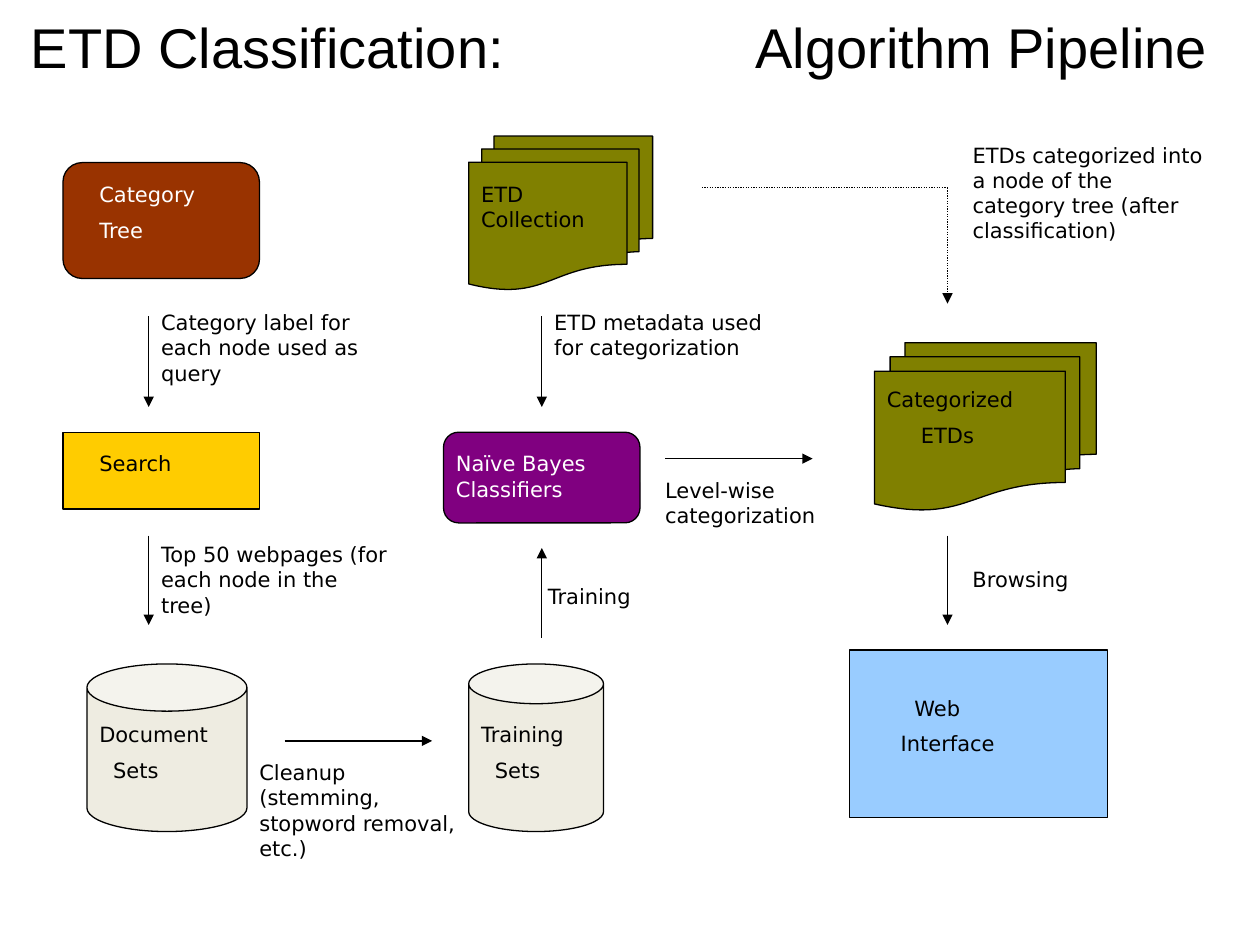
from pptx import Presentation
from pptx.dml.color import RGBColor as Rgb
from pptx.enum.dml import MSO_LINE as Dash
from pptx.enum.shapes import MSO_CONNECTOR as Conn, MSO_SHAPE as Shape
from pptx.enum.text import MSO_AUTO_SIZE as Fit, PP_ALIGN as Align
from pptx.oxml.ns import qn
from pptx.util import Inches, Pt
from lxml.etree import SubElement

COLORS = {
    "black": "000000", "white": "FFFFFF", "brown": "993300", "gold": "FFCC00",
    "purple": "800080", "cream": "EEECE1", "blue": "99CCFF", "olive": "808000",
}


class Flow:
    """Draws the parts of a flow diagram on one slide in a shared style."""

    font, size, width = "DejaVu Sans", 12, 0.75

    def __init__(self, slide):
        self.slide = slide

    def color(self, name):
        return Rgb.from_string(COLORS[name])

    def box(self, kind, place, fill, adjust=None):
        shape = self.slide.shapes.add_shape(kind, *map(Inches, place))
        shape.shadow.inherit = False
        shape.fill.solid()
        shape.fill.fore_color.rgb = self.color(fill)
        shape.line.color.rgb = self.color("black")
        shape.line.width = Pt(self.width)
        if adjust is not None:
            shape.adjustments[0] = adjust

    def label(self, para, text, color, font, size):
        para.text = text
        run = para.runs[0].font
        run.name, run.size = font, Pt(size)
        run.color.rgb = self.color(color)

    def text(self, place, lines, color="black", indent=0, gap=6):
        frame = self.slide.shapes.add_textbox(*map(Inches, place)).text_frame
        frame.word_wrap = True
        frame.auto_size = Fit.SHAPE_TO_FIT_TEXT
        for i, line in enumerate(lines):
            para = frame.add_paragraph() if i else frame.paragraphs[0]
            self.label(para, line, color, self.font, self.size)
            if i:
                para.space_before = Pt(gap)
            if i and indent:
                para._p.get_or_add_pPr().set("marL", str(Inches(indent)))

    def title(self, place, text):
        frame = self.slide.shapes.add_textbox(*map(Inches, place)).text_frame
        frame.word_wrap = True
        frame.margin_top = Inches(0.1)
        para = frame.paragraphs[0]
        self.label(para, text, "black", "Arial", 32)
        para.alignment = Align.CENTER

    def line(self, start, end, head=True, dash=None):
        link = self.slide.shapes.add_connector(
            Conn.STRAIGHT, *map(Inches, start + end))
        link.line.color.rgb = self.color("black")
        link.line.width = Pt(self.width)
        if dash:
            link.line.dash_style = dash
        props = link._element.spPr
        if head:
            SubElement(props.get_or_add_ln(), qn("a:tailEnd"), type="triangle")
        SubElement(props, qn("a:effectLst"))


def main():
    deck = Presentation()
    deck.slide_width, deck.slide_height = Inches(10), Inches(7.5)
    flow = Flow(deck.slides.add_slide(deck.slide_layouts[6]))

    for box in [
        (Shape.ROUNDED_RECTANGLE, (0.5, 1.29, 1.56, 0.92), "brown", 0.167),
        (Shape.CAN, (0.69, 5.27, 1.27, 1.33), "cream", 0.295),
        (Shape.RECTANGLE, (0.5, 3.43, 1.56, 0.61), "gold"),
        (Shape.ROUNDED_RECTANGLE, (3.52, 3.43, 1.56, 0.72), "purple", 0.167),
        (Shape.CAN, (3.72, 5.27, 1.07, 1.33), "cream", 0.295),
        (Shape.RECTANGLE, (6.74, 5.16, 2.05, 1.33), "blue"),
        (Shape.FLOWCHART_MULTIDOCUMENT, (3.72, 1.08, 1.46, 1.22), "olive"),
        (Shape.FLOWCHART_MULTIDOCUMENT, (6.94, 2.72, 1.76, 1.33), "olive"),
    ]:
        flow.box(*box)

    flow.text((0.69, 1.39, 1.76, 0.61), ["Category", "Tree"], "white")
    flow.text((3.52, 3.53, 1.66, 0.5), ["Naïve Bayes Classifiers"], "white")
    flow.text((0.69, 5.68, 1.46, 0.74), ["Document", "Sets"], indent=0.11)
    flow.text((3.72, 5.68, 1.46, 0.74), ["Training", "Sets"], indent=0.11)
    flow.text((6.94, 3.02, 1.56, 0.74), ["Categorized", "ETDs"], indent=0.27)
    flow.text((7.16, 5.47, 1.44, 0.37), ["Web"])
    flow.text((7.05, 5.75, 1.55, 0.37), ["Interface"])
    flow.text((1.96, 5.98, 2.05, 0.91),
              ["Cleanup", "(stemming,", "stopword removal,", "etc.)"], gap=0)

    for place, words in [
        ((0.69, 3.53, 1.07, 0.37), "Search"),
        ((3.72, 1.39, 1.36, 0.61), "ETD Collection"),
        ((1.18, 2.41, 2.05, 0.86), "Category label for each node used as query"),
        ((1.18, 4.25, 2.05, 0.86), "Top 50 webpages (for each node in the tree)"),
        ((5.18, 3.74, 2.05, 0.61), "Level-wise categorization"),
        ((4.3, 2.41, 2.05, 0.87), "ETD metadata used for categorization"),
        ((7.62, 4.45, 1.27, 0.37), "Browsing"),
        ((4.25, 4.58, 1.17, 0.37), "Training"),
        ((7.62, 1.08, 2.05, 1.35),
         "ETDs categorized into a node of the category tree (after classification)"),
    ]:
        flow.text(place, [words])

    for x, top, end in [(1.18, 2.51, 3.23), (1.18, 4.25, 4.96), (4.3, 2.51, 3.23),
                        (4.3, 5.06, 4.35), (7.52, 4.25, 4.96)]:
        flow.line((x, top), (x, end))
    for left, right, y in [(2.26, 3.43, 5.88), (5.28, 6.45, 3.64)]:
        flow.line((left, y), (right, y))
    turn = (7.52, 1.49)
    flow.line((5.57, 1.49), turn, head=False, dash=Dash.ROUND_DOT)
    flow.line(turn, (7.52, 2.41), dash=Dash.ROUND_DOT)

    flow.title((0, 0, 4.25, 0.75), "ETD Classification:")
    flow.title((5.58, 0, 4.42, 0.58), "Algorithm Pipeline")
    deck.save("out.pptx")


if __name__ == "__main__":
    main()
